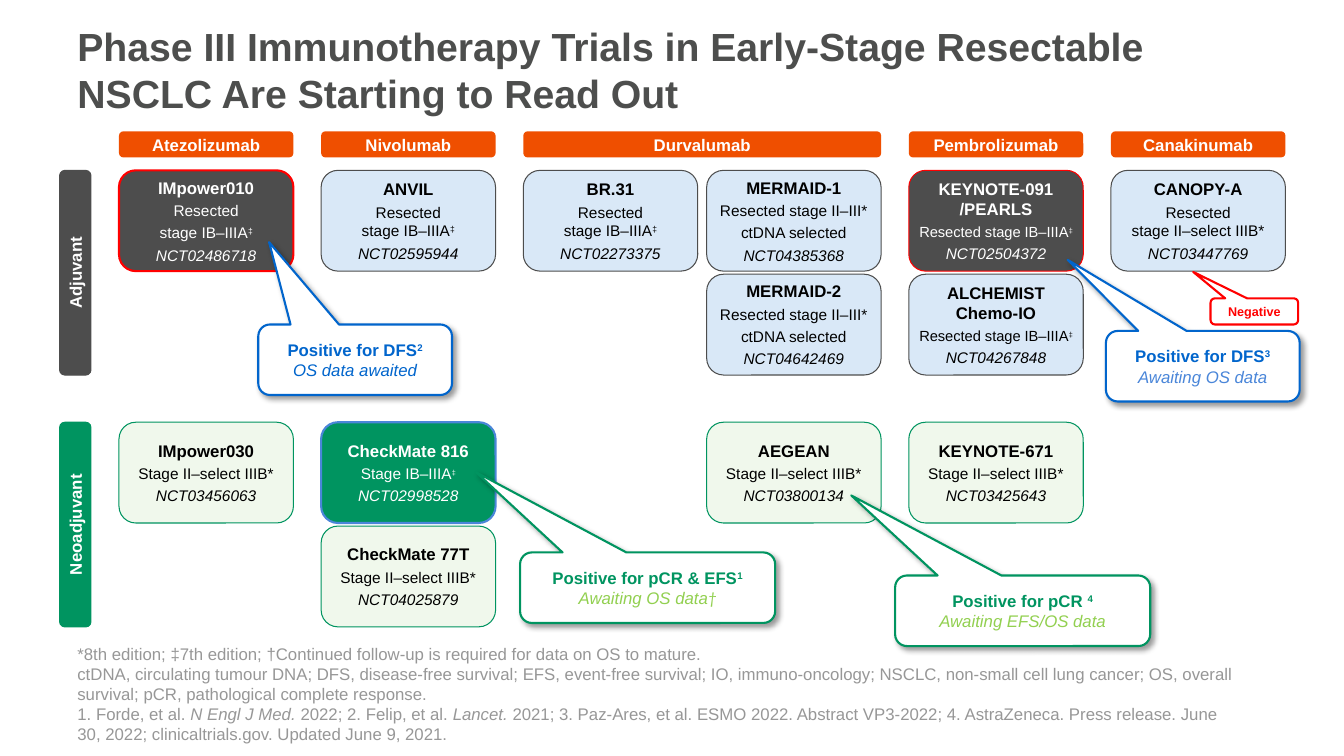
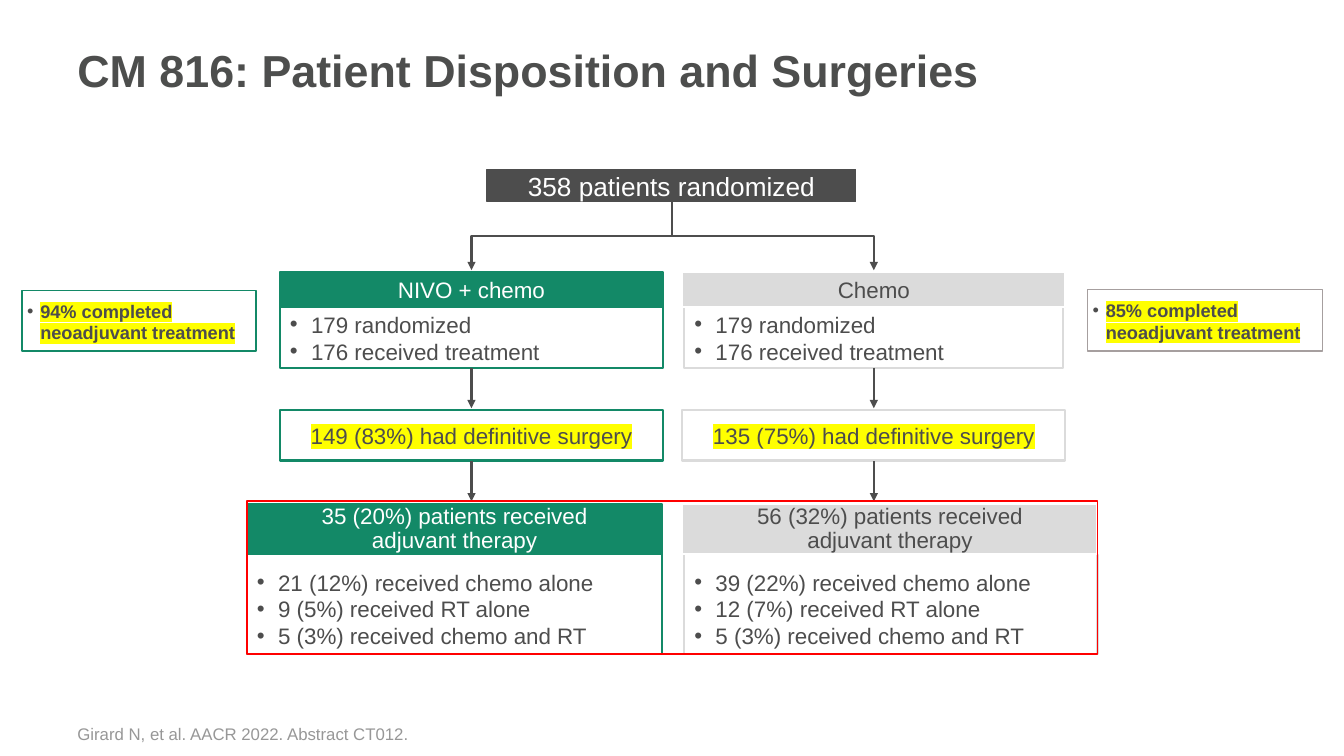
from dataclasses import dataclass
from typing import Optional, Sequence

from lxml.etree import SubElement
from pptx import Presentation
from pptx.dml.color import RGBColor
from pptx.enum.shapes import MSO_CONNECTOR, MSO_SHAPE
from pptx.enum.text import MSO_ANCHOR, PP_ALIGN
from pptx.oxml.ns import qn
from pptx.util import Pt

COLORS = {
    "white": "FFFFFF", "black": "000000", "title": "4D4E4D", "dark": "4D4D4D",
    "note": "979797", "orange": "EF4F00", "green": "009460", "mint": "F0F8EC",
    "sky": "D9E8F7", "blue": "0165CC", "soft blue": "4A86D9", "lime": "92D050",
    "red": "FF0000", "teal": "138967", "silver": "DBDBDB", "gray": "A69F9F",
    "yellow": "FFFF00",
}
LEFT, CENTER = PP_ALIGN.LEFT, PP_ALIGN.CENTER
MIDDLE, BOTTOM = MSO_ANCHOR.MIDDLE, MSO_ANCHOR.BOTTOM
DEFAULT_INSETS = (7.2, 3.6, 7.2, 3.6)
TIGHT_INSETS = (5, 5, 5, 5)
CALLOUT_INSETS = (9.4, 5, 9.4, 5)


@dataclass(frozen=True)
class Span:
    text: str
    size: float = 12
    color: str = "black"
    bold: bool = False
    italic: bool = False
    raised: bool = False
    font: str = "Arial"
    highlight: str = ""


@dataclass(frozen=True)
class Para:
    spans: Sequence[Span]
    align: PP_ALIGN = CENTER
    before: float = 0
    spacing: Optional[float] = None
    bullet_indent: float = 0


@dataclass(frozen=True)
class Box:
    left: float
    top: float
    width: float
    height: float


@dataclass(frozen=True)
class CardStyle:
    fill: str
    line: str
    text: str = "black"
    weight: float = 0.75


@dataclass(frozen=True)
class Trial:
    column: int
    row: int
    name: str
    details: Sequence[str]
    number: str
    style: CardStyle
    size: float = 11
    dagger_size: float = 10.5


@dataclass(frozen=True)
class Callout:
    box: Box
    tip: tuple[float, float]
    color: str
    paras: Sequence[Para]
    insets: tuple = CALLOUT_INSETS
    filled: bool = True


@dataclass(frozen=True)
class Arm:
    left: float
    adjuvant_left: float
    center: float
    fill: str
    edge: str
    frame: str
    text: str
    inset: float
    name: str
    surgery: str
    adjuvant: str
    therapies: Sequence[str]
    completed: str
    completed_box: Box
    completed_line: str


# Shared drawing functions
def rgb(name: str) -> RGBColor:
    return RGBColor.from_string(COLORS[name])


def add_span(para, span: Span) -> None:
    for index, line in enumerate(span.text.split("\n")):
        if index:
            para.add_line_break()
        run = para.add_run()
        run.text = line
        font = run.font
        font.name, font.size = span.font, Pt(span.size)
        font.bold, font.italic = span.bold, span.italic
        font.color.rgb = rgb(span.color)
        properties = run._r.get_or_add_rPr()
        if span.raised:
            properties.set("baseline", "30000")
        if span.highlight:
            mark = SubElement(properties, qn("a:highlight"))
            SubElement(mark, qn("a:srgbClr")).set("val", COLORS[span.highlight])
            properties.find(qn("a:solidFill")).addnext(mark)


def write(shape, paras: Sequence[Para], anchor=MIDDLE, insets=DEFAULT_INSETS) -> None:
    frame = shape.text_frame
    frame.word_wrap, frame.vertical_anchor = True, anchor
    frame.margin_left, frame.margin_top, frame.margin_right, frame.margin_bottom = map(Pt, insets)
    for index, content in enumerate(paras):
        para = frame.add_paragraph() if index else frame.paragraphs[0]
        para.alignment = content.align
        if index and content.before:
            para.space_before = Pt(content.before)
        if content.spacing:
            para.line_spacing = content.spacing
        if content.bullet_indent:
            properties = para._p.get_or_add_pPr()
            properties.set("marL", str(Pt(content.bullet_indent)))
            properties.set("indent", str(-Pt(content.bullet_indent)))
            SubElement(properties, qn("a:buFont")).set("typeface", "Arial")
            SubElement(properties, qn("a:buChar")).set("char", "•")
        for span in content.spans:
            add_span(para, span)


def add_box(page, box: Box, fill="", line="", weight=1.5, kind=MSO_SHAPE.RECTANGLE):
    shape = page.shapes.add_shape(kind, Pt(box.left), Pt(box.top), Pt(box.width), Pt(box.height))
    shape.shadow.inherit = False
    if fill:
        shape.fill.solid()
        shape.fill.fore_color.rgb = rgb(fill)
    else:
        shape.fill.background()
    if line:
        shape.line.color.rgb, shape.line.width = rgb(line), Pt(weight)
    else:
        shape.line.fill.background()
    return shape


def add_text(page, box: Box, paras: Sequence[Para], anchor) -> None:
    shape = page.shapes.add_textbox(Pt(box.left), Pt(box.top), Pt(box.width), Pt(box.height))
    write(shape, paras, anchor)


def add_page(deck, title: str, size: float, notes: Sequence[Sequence[Span]]):
    page = deck.slides.add_slide(deck.slide_layouts[6])
    add_text(page, Box(48.2, 3, 846, 93.6), [Para([Span(title, size, "title", True)], LEFT)], MIDDLE)
    add_text(page, Box(48.2, 500.4, 846, 34.6), [Para(spans, LEFT) for spans in notes], BOTTOM)
    return page


def note(text: str, italic: bool = False) -> Span:
    return Span(text, 12, "note", italic=italic)


# Trial map
CARD_WIDTH, CARD_HEIGHT, ROW_STEP = 124.6, 72, 74.2
COLUMNS = (85, 229.4, 373.8, 504.8, 649.2, 793.6)
ADJUVANT_TOP, NEOADJUVANT_TOP = 121.7, 301.6
ROWS = (ADJUVANT_TOP, ADJUVANT_TOP + ROW_STEP, NEOADJUVANT_TOP, NEOADJUVANT_TOP + ROW_STEP)
DRUGS = (("Atezolizumab", 0, 0), ("Nivolumab", 1, 1), ("Durvalumab", 2, 3),
         ("Pembrolizumab", 4, 4), ("Canakinumab", 5, 5))
PHASES = (("Adjuvant", ADJUVANT_TOP, "dark"), ("Neoadjuvant", NEOADJUVANT_TOP, "green"))

SKY, MINT = CardStyle("sky", "dark"), CardStyle("mint", "green")
TRIALS = (
    Trial(5, 0, "CANOPY-A", ["Resected\nstage II–select IIIB*"], "NCT03447769", SKY),
    Trial(0, 0, "IMpower010", ["Resected", "stage IB–IIIA‡"], "NCT02486718",
          CardStyle("dark", "red", "white", 1.5)),
    Trial(0, 2, "IMpower030", ["Stage II–select IIIB*"], "NCT03456063", MINT),
    Trial(4, 0, "KEYNOTE-091\n/PEARLS", ["Resected stage IB–IIIA‡"], "NCT02504372",
          CardStyle("dark", "red", "white"), 10.5, 9),
    Trial(4, 1, "ALCHEMIST\nChemo-IO", ["Resected stage IB–IIIA‡"], "NCT04267848", SKY, 10.5, 9),
    Trial(4, 2, "KEYNOTE-671", ["Stage II–select IIIB*"], "NCT03425643", MINT),
    Trial(1, 0, "ANVIL", ["Resected\nstage IB–IIIA‡"], "NCT02595944", SKY),
    Trial(1, 3, "CheckMate 77T", ["Stage II–select IIIB*"], "NCT04025879", MINT),
    Trial(1, 2, "CheckMate 816", ["Stage IB–IIIA‡"], "NCT02998528",
          CardStyle("green", "soft blue", "white", 1.5), dagger_size=9),
    Trial(2, 0, "BR.31", ["Resected\nstage IB–IIIA‡"], "NCT02273375", SKY),
    Trial(3, 0, "MERMAID-1", ["Resected stage II–III*", "ctDNA selected"], "NCT04385368", SKY),
    Trial(3, 2, "AEGEAN", ["Stage II–select IIIB*"], "NCT03800134", MINT),
    Trial(3, 1, "MERMAID-2", ["Resected stage II–III*", "ctDNA selected"], "NCT04642469", SKY),
)


def result(head: str, reference: str, color: str, status: str, status_color: str,
           mark: str = "") -> list[Para]:
    second = [Span(status, 12, status_color, italic=True)]
    if mark:
        second.append(Span(mark, 12, status_color, italic=True, font="Calibri"))
    return [Para([Span(head, 12, color, True), Span(reference, 12, color, True, raised=True)]),
            Para(second)]


CALLOUTS = (
    Callout(Box(371.5, 394.6, 182.2, 50.4), (-0.672, -1.635), "green",
            result("Positive for pCR & EFS", "1", "green", "Awaiting OS data", "lime", "†")),
    Callout(Box(184.5, 231.8, 138.4, 50.4), (-0.444, -1.667), "blue",
            result("Positive for DFS", "2", "blue", "OS data awaited", "blue")),
    Callout(Box(790, 236.4, 138.4, 50.4), (-0.698, -1.508), "blue",
            result("Positive for DFS", "3", "blue", "Awaiting OS data", "soft blue")),
    Callout(Box(639.4, 411.1, 182.2, 50.4), (-0.672, -1.635), "green",
            result("Positive for pCR ", "4", "green", "Awaiting EFS/OS data", "lime")),
    Callout(Box(864.7, 213.1, 62.6, 18.7), (-0.698, -1.508), "red",
            [Para([Span("Negative", 9, "red", True)])], filled=False),
)


def add_label(page, box: Box, text: str, fill: str, line: str = ""):
    shape = add_box(page, box, fill, line, 0.75, MSO_SHAPE.ROUNDED_RECTANGLE)
    write(shape, [Para([Span(text, 12, "white", True)])], insets=TIGHT_INSETS)
    return shape


def add_trial(page, trial: Trial) -> None:
    style = trial.style
    box = Box(COLUMNS[trial.column], ROWS[trial.row], CARD_WIDTH, CARD_HEIGHT)
    shape = add_box(page, box, style.fill, style.line, style.weight, MSO_SHAPE.ROUNDED_RECTANGLE)
    paras = [Para([Span(trial.name, 12, style.text, True)])]
    for detail in trial.details:
        stage, dagger, _ = detail.partition("‡")
        spans = [Span(stage, trial.size, style.text)]
        if dagger:
            spans.append(Span(dagger, trial.dagger_size, style.text, raised=True))
        paras.append(Para(spans, before=2.7))
    paras.append(Para([Span(trial.number, 11, style.text, italic=True)], before=2.7))
    write(shape, paras, insets=(0, 0, 0, 0))


def add_callout(page, callout: Callout) -> None:
    shape = add_box(page, callout.box, "white" if callout.filled else "", callout.color,
                    kind=MSO_SHAPE.ROUNDED_RECTANGULAR_CALLOUT)
    shape.adjustments[0], shape.adjustments[1] = callout.tip
    if callout.filled:
        effects = shape._element.spPr.find(qn("a:effectLst"))
        shadow = SubElement(effects, qn("a:outerShdw"), blurRad=str(Pt(4)), dist=str(Pt(3)),
                            dir="2700000", algn="tl", rotWithShape="0")
        color = SubElement(shadow, qn("a:srgbClr"), val=COLORS["black"])
        SubElement(color, qn("a:alpha"), val="40000")
    write(shape, callout.paras, insets=callout.insets)


def build_trial_map(deck) -> None:
    page = add_page(deck, "Phase III Immunotherapy Trials in Early-Stage Resectable "
                    "NSCLC Are Starting to Read Out", 28, [
        [note("*8th edition; ‡7th edition; †Continued follow-up is required for data on OS to mature.")],
        [note("ctDNA, circulating tumour DNA; DFS, disease-free survival; EFS, event-free survival; "
              "IO, immuno-oncology; NSCLC, non-small cell lung cancer; OS, overall survival; "
              "pCR, pathological complete response.")],
        [note("1. Forde, et al. "), note("N Engl J Med. ", True), note("2022; 2. Felip, et al. "),
         note("Lancet. ", True), note("2021; 3. Paz-Ares, et al. ESMO 2022. Abstract VP3-2022; "
         "4. AstraZeneca. Press release. June 30, 2022; clinicaltrials.gov. Updated June 9, 2021.")]])
    length, thickness, middle = ROW_STEP + CARD_HEIGHT, 22.4, 53.8
    for text, top, fill in PHASES:
        box = Box(middle - length / 2, top + (length - thickness) / 2, length, thickness)
        add_label(page, box, text, fill, fill).rotation = 270
    for text, first, last in DRUGS:
        width = COLUMNS[last] + CARD_WIDTH - COLUMNS[first]
        add_label(page, Box(COLUMNS[first], 93.8, width, 18.7), text, "orange")
    for trial in TRIALS:
        add_trial(page, trial)
    for callout in CALLOUTS:
        add_callout(page, callout)


# Patient flow
ARMS = (
    Arm(200, 176.4, 336.8, "teal", "teal", "teal", "white", 0, "NIVO + chemo",
        "149 (83%) had definitive surgery", "35 (20%) patients received\nadjuvant therapy",
        ("21 (12%) received chemo alone", "9 (5%) received RT alone", "5 (3%) received chemo and RT"),
        "94% completed neoadjuvant treatment", Box(15.8, 207.4, 167.2, 43.4), "teal"),
    Arm(487.4, 487.4, 624.2, "silver", "white", "silver", "dark", 1.5, "Chemo",
        "135 (75%) had definitive surgery", "56 (32%) patients received\nadjuvant therapy",
        ("39 (22%) received chemo alone", "12 (7%) received RT alone", "5 (3%) received chemo and RT"),
        "85% completed neoadjuvant treatment", Box(776.9, 206.8, 167.8, 44), "gray"),
)
ARM_WIDTH, ADJUVANT_WIDTH = 273.6, 296.6


def add_arrow(page, kind, x1: float, y1: float, x2: float, y2: float):
    arrow = page.shapes.add_connector(kind, Pt(x1), Pt(y1), Pt(x2), Pt(y2))
    arrow.line.color.rgb, arrow.line.width = rgb("dark"), Pt(1.5)
    SubElement(arrow.line._get_or_add_ln(), qn("a:tailEnd")).set("type", "triangle")
    SubElement(arrow._element.spPr, qn("a:effectLst"))
    return arrow


def add_branch(page, x1: float, y1: float, x2: float, y2: float) -> None:
    """Elbow that leaves downwards: its frame is turned a quarter."""
    x, y = (x1 + x2) / 2, (y1 + y2) / 2
    half_width, half_height = (y2 - y1) / 2, abs(x2 - x1) / 2
    arrow = add_arrow(page, MSO_CONNECTOR.ELBOW, x - half_width, y - half_height,
                      x + half_width, y + half_height)
    frame = arrow._element.spPr.find(qn("a:xfrm"))
    frame.set("rot", "5400000" if x2 < x1 else "16200000")
    if x2 > x1:
        frame.set("flipH", "1")


def bullets(lines: Sequence[str]) -> list[Para]:
    return [Para([Span(line, 16, "dark")], LEFT, bullet_indent=15.1) for line in lines]


def add_arm(page, arm: Arm) -> None:
    side = add_box(page, arm.completed_box, line=arm.completed_line, weight=1)
    write(side, [Para([Span(arm.completed, 13, "dark", True, highlight="yellow")], LEFT,
                      bullet_indent=9.4)], insets=(3.6, 5, 3.6, 3.6))
    treated = add_box(page, Box(arm.left + arm.inset, 219.6, ARM_WIDTH - 2 * arm.inset, 43.2),
                      line=arm.frame)
    write(treated, bullets(("179 randomized", "176 received treatment")))
    head = add_box(page, Box(arm.left, 194.4, ARM_WIDTH, 25.2), arm.fill, arm.edge)
    write(head, [Para([Span(arm.name, 16, arm.text)])])
    surgery = add_box(page, Box(arm.left, 293, ARM_WIDTH, 36), line=arm.frame)
    write(surgery, [Para([Span(arm.surgery, 16, "dark", highlight="yellow")])])
    therapies = add_box(page, Box(arm.adjuvant_left + arm.inset, 396,
                                  ADJUVANT_WIDTH - arm.inset, 71.3), "white", arm.frame)
    write(therapies, bullets(arm.therapies), BOTTOM)
    adjuvant = add_box(page, Box(arm.adjuvant_left, 360, ADJUVANT_WIDTH, 36), arm.fill, arm.edge)
    write(adjuvant, [Para([Span(arm.adjuvant, 16, arm.text)], spacing=0.9)])
    for top in (262.8, 329.4):
        add_arrow(page, MSO_CONNECTOR.STRAIGHT, arm.center, top, arm.center, top + 28.8)
    add_branch(page, 479.8, 144, arm.center, 193)


def build_patient_flow(deck) -> None:
    page = add_page(deck, "CM 816: Patient Disposition and Surgeries", 32,
                    [[note("Girard N, et al. AACR 2022. Abstract CT012.")]])
    randomized = add_box(page, Box(347.8, 121, 263.5, 23), "dark", "dark", 1)
    write(randomized, [Para([Span("358 patients randomized", 18.7, "white")])])
    for arm in ARMS:
        add_arm(page, arm)
    add_box(page, Box(176.4, 357.8, 607.7, 109.5), line="red", weight=1)


def main() -> None:
    deck = Presentation()
    deck.slide_width, deck.slide_height = Pt(960), Pt(540)
    build_trial_map(deck)
    build_patient_flow(deck)
    deck.save("out.pptx")


if __name__ == "__main__":
    main()
